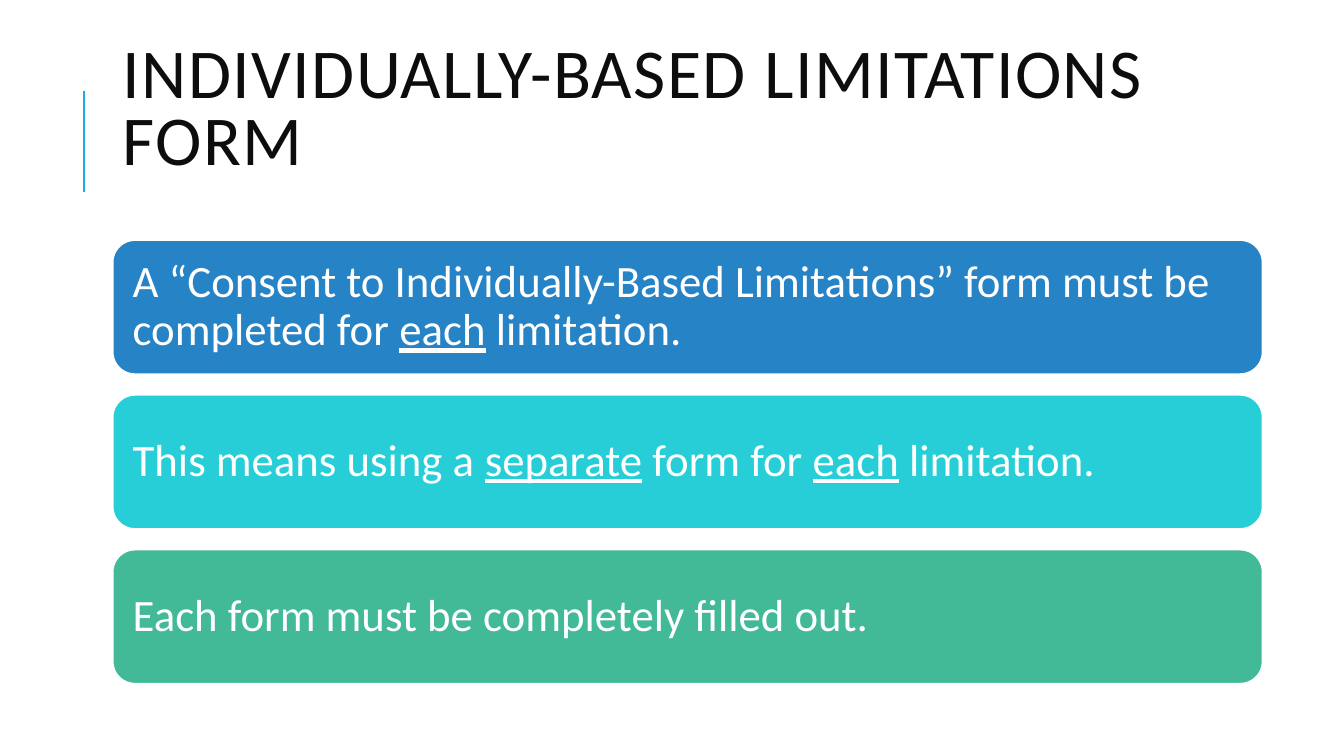
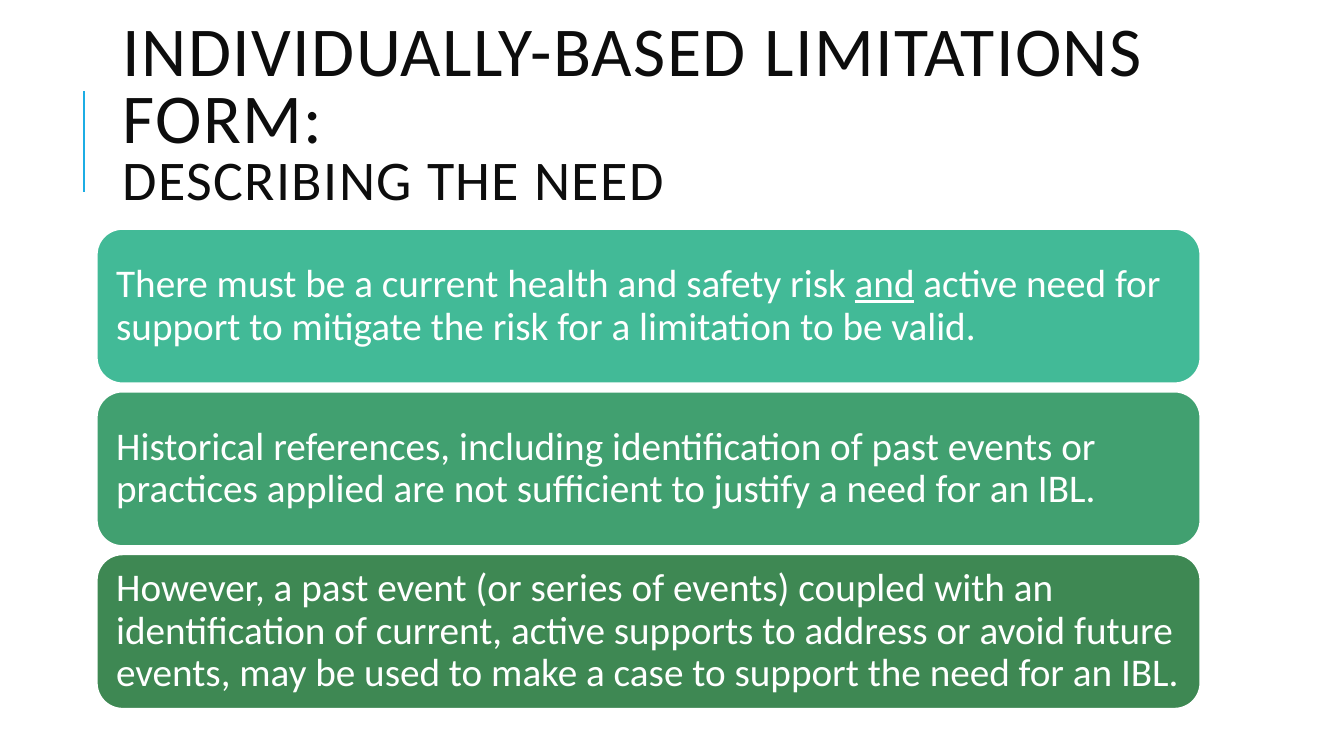
from lxml import etree
from pptx import Presentation
from pptx.dml.color import RGBColor
from pptx.enum.shapes import MSO_CONNECTOR as CONN, MSO_SHAPE as SHAPE
from pptx.enum.text import MSO_ANCHOR as ANCHOR, MSO_AUTO_SIZE as AUTO, PP_ALIGN as ALIGN
from pptx.oxml.ns import qn
from pptx.util import Cm, Pt

COLORS = {
    "accent": "1CADE4", "title": "0D0D0D", "white": "FFFFFF",
    "blue": "2683C6", "cyan": "27CED7", "teal": "42BA97",
    "green": "41A070", "forest": "3E8853",
}
FONT = "Calibri"
TITLE_ONLY = 5


def rgb(name):
    return RGBColor.from_string(COLORS[name])


def write_text(p, text, size, color, spacing=None):
    """Append text to a paragraph; words between underscores are underlined."""
    for i, part in enumerate(text.split("_")):
        if not part:
            continue
        r = p.add_run()
        r.text = part
        r.font.name = FONT
        r.font.size = Pt(size)
        r.font.color.rgb = rgb(color)
        if i % 2:
            r.font.underline = True
        if spacing:
            r.font._element.set("spc", str(spacing * 100))


def add_accent_line(s):
    line = s.shapes.add_connector(CONN.STRAIGHT, Cm(2.11), Cm(4.83), Cm(2.11), Cm(2.29))
    line.line.color.rgb = rgb("accent")
    line.line.width = Pt(1.5)
    etree.SubElement(line._element.spPr, qn("a:effectLst"))


def set_title(s, top, title, subtitle=None):
    sp = s.shapes.title
    sp.left, sp.top, sp.width, sp.height = Cm(2.84), Cm(top), Cm(27), Cm(4.17)
    tf = sp.text_frame
    tf.word_wrap = True
    tf.auto_size = AUTO.NONE
    tf.vertical_anchor = ANCHOR.MIDDLE
    p = tf.paragraphs[0]
    p.alignment = ALIGN.LEFT
    p.line_spacing = 0.8
    write_text(p, title, size=50, color="title", spacing=1)
    if subtitle:
        p.add_line_break()
        write_text(p, subtitle, size=40, color="title", spacing=1)


def add_bar(s, left, top, width, height, text, fill, size, inset):
    sp = s.shapes.add_shape(SHAPE.ROUNDED_RECTANGLE, Cm(left), Cm(top), Cm(width), Cm(height))
    sp.shadow.inherit = False
    sp.fill.solid()
    sp.fill.fore_color.rgb = rgb(fill)
    sp.line.color.rgb = rgb("white")
    sp.line.width = Pt(1.25)
    tf = sp.text_frame
    tf.word_wrap = True
    tf.vertical_anchor = ANCHOR.MIDDLE
    tf.margin_left = tf.margin_right = tf.margin_top = tf.margin_bottom = Cm(inset)
    p = tf.paragraphs[0]
    p.alignment = ALIGN.LEFT
    p.line_spacing = 0.9
    write_text(p, text, size=size, color="white")


def add_bars(s, bars, left, top, width, height, gap, **style):
    """Stack bars downwards with equal gaps."""
    for i, (fill, text) in enumerate(bars):
        add_bar(s, left, top + i * (height + gap), width, height, text, fill, **style)


def new_slide(prs, top, title, subtitle=None):
    s = prs.slides.add_slide(prs.slide_layouts[TITLE_ONLY])
    add_accent_line(s)
    set_title(s, top, title, subtitle)
    return s


def main():
    prs = Presentation()
    prs.slide_width, prs.slide_height = Cm(33.87), Cm(19.05)

    # Slide 1: one form per limitation
    s = new_slide(prs, 0.74, "INDIVIDUALLY-BASED LIMITATIONS FORM")
    add_bars(s, [
        ("blue", "A “Consent to Individually-Based Limitations” form must be "
                 "completed for _each_ limitation."),
        ("cyan", "This means using a _separate_ form for _each_ limitation."),
        ("teal", "Each form must be completely filled out."),
    ], left=2.84, top=6.05, width=28.98, height=3.38, gap=0.52, size=32, inset=0.34)

    # Slide 2: describing the need
    s = new_slide(prs, 0.86, "INDIVIDUALLY-BASED LIMITATIONS FORM:", "DESCRIBING THE NEED")
    add_bars(s, [
        ("teal", "There must be a current health and safety risk _and_ active need for "
                 "support to mitigate the risk for a limitation to be valid."),
        ("green", "Historical references, including identification of past events or "
                  "practices applied are not sufficient to justify a need for an IBL."),
        ("forest", "However, a past event (or series of events) coupled with an "
                   "identification of current, active supports to address or avoid future "
                   "events, may be used to make a case to support the need for an IBL."),
    ], left=2.44, top=5.77, width=27.81, height=3.89, gap=0.21, size=28, inset=0.3)

    prs.save("out.pptx")


if __name__ == "__main__":
    main()
